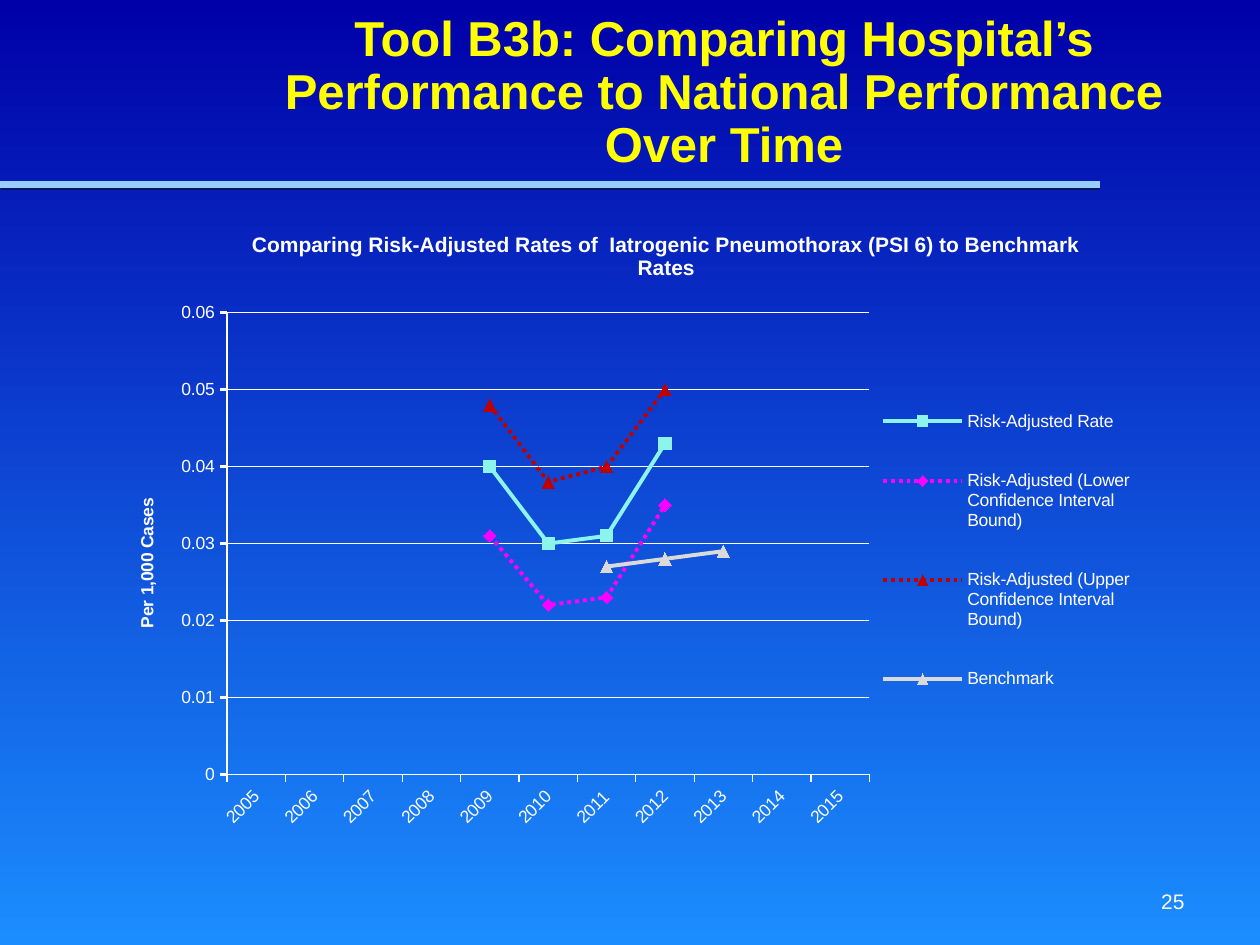
from lxml import etree
from pptx import Presentation
from pptx.chart.data import CategoryChartData
from pptx.dml.color import RGBColor
from pptx.enum.chart import XL_CHART_TYPE, XL_LEGEND_POSITION, XL_MARKER_STYLE, XL_TICK_MARK
from pptx.enum.dml import MSO_LINE
from pptx.enum.shapes import MSO_CONNECTOR
from pptx.enum.text import MSO_ANCHOR, PP_ALIGN
from pptx.oxml.ns import qn
from pptx.util import Cm, Pt

LINE = XL_CHART_TYPE.LINE_MARKERS
RIGHT = XL_LEGEND_POSITION.RIGHT
OUT, NONE = XL_TICK_MARK.OUTSIDE, XL_TICK_MARK.NONE
SQUARE, DIAMOND, TRIANGLE = XL_MARKER_STYLE.SQUARE, XL_MARKER_STYLE.DIAMOND, XL_MARKER_STYLE.TRIANGLE
SOLID, DOTS = MSO_LINE.SOLID, MSO_LINE.ROUND_DOT
WHITE = "FFFFFF"
YEARS = range(2005, 2016)
SERIES = [
    ("Risk-Adjusted Rate", 2009, [0.04, 0.03, 0.031, 0.043], "8CF4EA", SQUARE, SOLID),
    ("Risk-Adjusted (Lower Confidence Interval Bound)", 2009,
     [0.031, 0.022, 0.023, 0.035], "FF00FF", DIAMOND, DOTS),
    ("Risk-Adjusted (Upper Confidence Interval Bound)", 2009,
     [0.048, 0.038, 0.04, 0.05], "C00000", TRIANGLE, DOTS),
    ("Benchmark", 2011, [0.027, 0.028, 0.029], "DADADA", TRIANGLE, SOLID),
]


def paint(color, value):
    color.rgb = RGBColor.from_string(value)


def style(font, size, color=WHITE, bold=False):
    font.name, font.size, font.bold = "Arial", Pt(size), bold
    paint(font.color, color)


def stroke(line, color, width):
    paint(line.color, color)
    line.width = Pt(width)


def add_back(slide):
    fill = slide.background.fill
    fill.gradient()
    fill.gradient_angle = 270
    for stop, color, pos in zip(fill.gradient_stops, ("0000A8", "1B8DFF"), (0, 1)):
        paint(stop.color, color)
        stop.position = pos


def add_rule(slide, left, top, right, color):
    rule = slide.shapes.add_connector(MSO_CONNECTOR.STRAIGHT, Cm(left), Cm(top), Cm(right), Cm(top))
    stroke(rule.line, color, 4)
    etree.SubElement(rule._element.spPr, qn("a:effectLst"))


def add_text(slide, box, text, size, color, align, anchor, bold=False, space=1.0):
    frame = slide.shapes.add_textbox(*map(Cm, box)).text_frame
    frame.word_wrap = True
    frame.vertical_anchor = anchor
    frame.text = text
    para = frame.paragraphs[0]
    para.alignment, para.line_spacing = align, space
    style(para.runs[0].font, size, color, bold)


def place(part, index, box, inner=False):
    for old in part.findall(qn("c:layout")):
        part.remove(old)
    layout = etree.Element(qn("c:layout"))
    part.insert(index, layout)
    manual = etree.SubElement(layout, qn("c:manualLayout"))
    rules = [("layoutTarget", "inner")] if inner else []
    rules += [("xMode", "edge"), ("yMode", "edge"), *zip("xywh", box)]
    for tag, value in rules:
        etree.SubElement(manual, qn("c:" + tag)).set("val", str(value))


def set_title(title, text, size, spot):
    title.text_frame.text = text
    style(title.text_frame.paragraphs[0].runs[0].font, size, WHITE, True)
    place(title._element, 1, spot)


def set_axes(chart):
    cat, val = chart.category_axis, chart.value_axis
    for axis, width in ((cat, 0.75), (val, 1.5)):
        axis.major_tick_mark, axis.minor_tick_mark = OUT, NONE
        stroke(axis.format.line, WHITE, width)
        style(axis.tick_labels.font, 10)
    cat._element.find(qn("c:txPr")).find(qn("a:bodyPr")).set("rot", "-2700000")
    val.minimum_scale, val.maximum_scale, val.major_unit = 0, 0.06, 0.01
    val.tick_labels.number_format = "General"
    val.tick_labels.number_format_is_linked = False
    val.has_major_gridlines = True
    stroke(val.major_gridlines.format.line, WHITE, 0.75)
    set_title(val.axis_title, "Per 1,000 Cases", 10, (0.03, 0.42))


def set_series(plot):
    for series, (_, _, _, color, mark, dash) in zip(plot.series, SERIES):
        series.smooth = False
        stroke(series.format.line, color, 2.25)
        series.format.line.dash_style = dash
        marker = series.marker
        marker.style, marker.size = mark, 7
        marker.format.fill.solid()
        paint(marker.format.fill.fore_color, color)
        stroke(marker.format.line, color, 0.75)


def add_graph(slide, box):
    data = CategoryChartData()
    data.categories = [str(year) for year in YEARS]
    for name, start, rates, *_ in SERIES:
        known = dict(enumerate(rates, start))
        data.add_series(name, [known.get(year) for year in YEARS])
    chart = slide.shapes.add_chart(LINE, *map(Cm, box), data).chart
    style(chart.font, 10)
    chart.has_title = True
    set_title(chart.chart_title,
              "Comparing Risk-Adjusted Rates of  Iatrogenic Pneumothorax (PSI 6) to Benchmark Rates",
              12, (0.14, 0.01))
    chart.has_legend = True
    legend = chart.legend
    legend.position, legend.include_in_layout = RIGHT, False
    style(legend.font, 10)
    place(legend._element, 1, (0.73, 0.23, 0.26, 0.55))
    plot = chart.plots[0]
    plot.vary_by_categories = False
    place(plot._element.getparent(), 0, (0.12, 0.14, 0.61, 0.71), True)
    set_axes(chart)
    set_series(plot)


def main():
    deck = Presentation()
    deck.slide_width, deck.slide_height = Cm(25.4), Cm(19.05)
    slide = deck.slides.add_slide(deck.slide_layouts[6])
    add_back(slide)
    add_rule(slide, 0.03, 3.76, 22.17, "001760")
    add_rule(slide, 0, 3.71, 22.17, "99CCFF")
    add_text(slide, (4.65, 0.64, 19.89, 2.97),
             "Tool B3b: Comparing Hospital’s Performance to National Performance Over Time",
             28, "FFFF00", PP_ALIGN.CENTER, MSO_ANCHOR.BOTTOM, True, 0.9)
    add_graph(slide, (2.03, 4.47, 21.23, 13.11))
    add_text(slide, (18.21, 17.65, 5.92, 1.02), "25", 12, WHITE, PP_ALIGN.RIGHT, MSO_ANCHOR.MIDDLE)
    deck.save("out.pptx")


if __name__ == "__main__":
    main()
